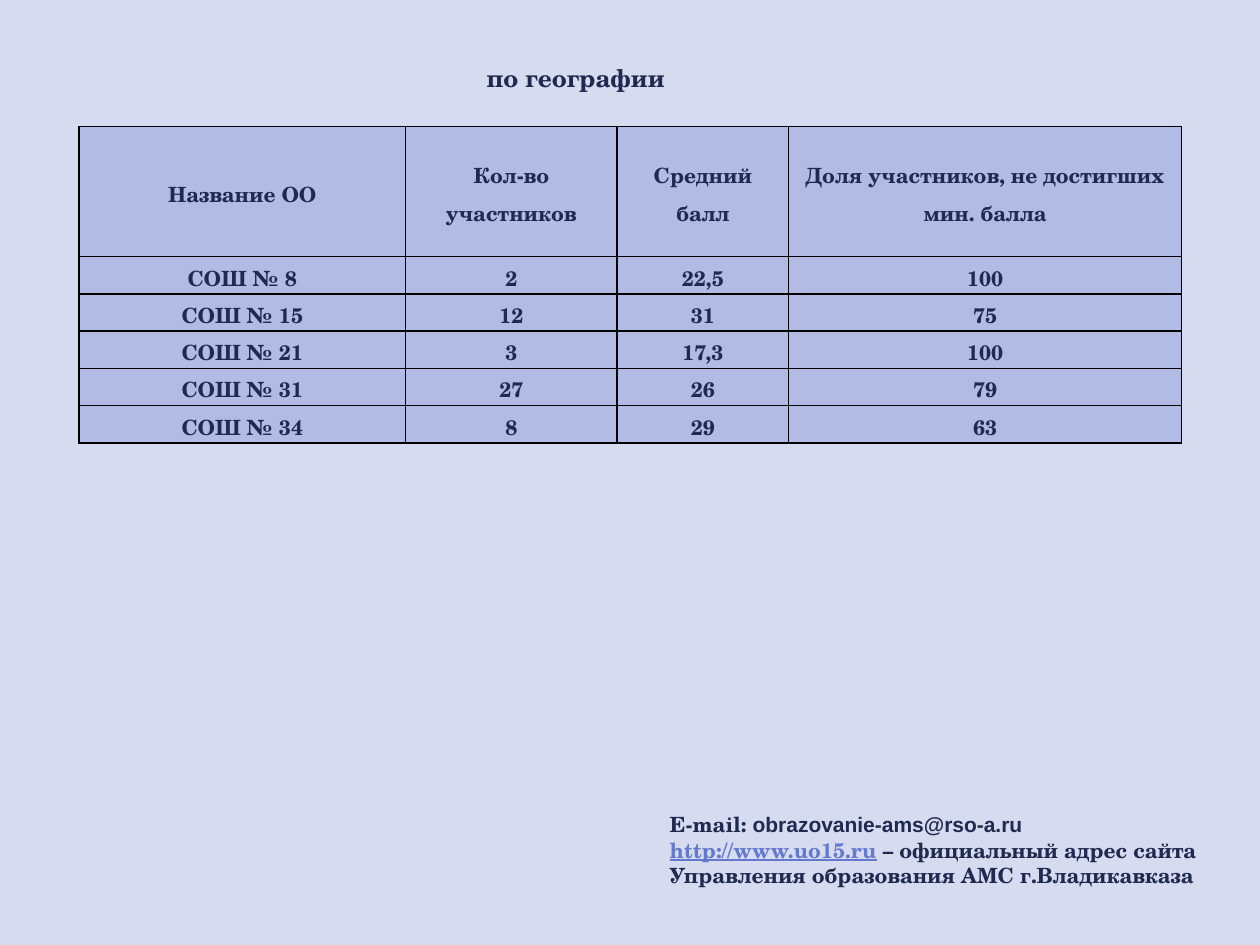
from lxml.etree import SubElement
from pptx import Presentation
from pptx.dml.color import RGBColor
from pptx.enum.text import MSO_ANCHOR as Anchor, MSO_AUTO_SIZE as AutoSize, PP_ALIGN as Align
from pptx.oxml.ns import qn
from pptx.util import Pt

BACKGROUND = RGBColor(0xD6, 0xDB, 0xEF)
CELL = RGBColor(0xB2, 0xBB, 0xE4)
INK = RGBColor(0x20, 0x2A, 0x51)
LINK = RGBColor(0x63, 0x79, 0xCE)
BORDER = RGBColor(0, 0, 0)
SERIF, SANS = "TeX Gyre Schola", "Arial"

COLUMNS = [186.5, 121, 98, 224.6]
HEADER_HEIGHT, ROW_HEIGHT = 74.2, 21.3
RESULTS = [
    ["Название ОО", "Кол-во участников", "Средний балл", "Доля участников, не достигших мин. балла"],
    ["СОШ № 8", "2", "22,5", "100"],
    ["СОШ № 15", "12", "31", "75"],
    ["СОШ № 21", "3", "17,3", "100"],
    ["СОШ № 31", "27", "26", "79"],
    ["СОШ № 34", "8", "29", "63"],
]
CONTACTS = [
    [("E-mail: ", {}), ("obrazovanie-ams@rso-a.ru", {"name": SANS})],
    [("http://www.uo15.ru", {"color": LINK, "underline": True}),
     (" – официальный адрес сайта Управления образования АМС г.Владикавказа", {})],
]


def set_attrs(target, values):
    for name, value in values.items():
        setattr(target, name, value)


class SlideBuilder:
    font = {"name": SERIF, "size": Pt(12), "bold": True, "color": INK}

    def __init__(self, s):
        self.s = s
        fill = s.background.fill
        fill.solid()
        fill.fore_color.rgb = BACKGROUND

    def paragraph(self, p, runs, align, line_spacing, **changes):
        set_attrs(p, {"alignment": align, "line_spacing": Pt(line_spacing), "space_before": Pt(0)})
        for text, extra in runs:
            r = p.add_run()
            r.text = text
            values = {**self.font, **changes, **extra}
            r.font.color.rgb = values.pop("color")
            set_attrs(r.font, values)

    def title(self, text, left, top, width, height):
        sp = self.s.shapes.title
        set_attrs(sp, {"left": Pt(left), "top": Pt(top), "width": Pt(width), "height": Pt(height)})
        tf = sp.text_frame
        set_attrs(tf, {"word_wrap": False, "vertical_anchor": Anchor.MIDDLE,
                       "auto_size": AutoSize.NONE})
        self.paragraph(tf.paragraphs[0], [(text, {})], Align.CENTER, 17, size=Pt(14))

    def text(self, paragraphs, left, top, width, height):
        sp = self.s.shapes.add_textbox(Pt(left), Pt(top), Pt(width), Pt(height))
        tf = sp.text_frame
        tf.word_wrap = True
        for i, runs in enumerate(paragraphs):
            p = tf.add_paragraph() if i else tf.paragraphs[0]
            self.paragraph(p, runs, Align.LEFT, 14.6)

    def border(self, cell):
        props = cell._tc.get_or_add_tcPr()
        for i, side in enumerate(("lnL", "lnR", "lnT", "lnB")):
            line = props.makeelement(qn(f"a:{side}"), {"w": str(Pt(1))})
            props.insert(i, line)
            solid = SubElement(line, qn("a:solidFill"))
            SubElement(solid, qn("a:srgbClr"), val=str(BORDER))

    def table(self, rows, columns, left, top):
        heights = [HEADER_HEIGHT] + [ROW_HEIGHT] * (len(rows) - 1)
        table = self.s.shapes.add_table(len(rows), len(columns), Pt(left), Pt(top),
                                        Pt(sum(columns)), Pt(sum(heights))).table
        for column, width in zip(table.columns, columns):
            column.width = Pt(width)
        for row, height, texts in zip(table.rows, heights, rows):
            row.height = Pt(height)
            for cell, text in zip(row.cells, texts):
                set_attrs(cell, {"margin_left": Pt(5), "margin_right": Pt(5), "margin_top": 0,
                                 "margin_bottom": 0, "vertical_anchor": Anchor.MIDDLE})
                cell.fill.solid()
                cell.fill.fore_color.rgb = CELL
                self.border(cell)
                p = cell.text_frame.paragraphs[0]
                self.paragraph(p, [(text, {})], Align.CENTER, ROW_HEIGHT)


def main():
    prs = Presentation()
    set_attrs(prs, {"slide_width": Pt(720), "slide_height": Pt(540)})
    slide = SlideBuilder(prs.slides.add_slide(prs.slide_layouts[5]))
    slide.title("по географии", 270, 32, 118, 24.5)
    slide.table(RESULTS, COLUMNS, 45.2, 72.4)
    slide.text(CONTACTS, 375.6, 460, 335.5, 51)
    prs.save("out.pptx")


if __name__ == "__main__":
    main()
